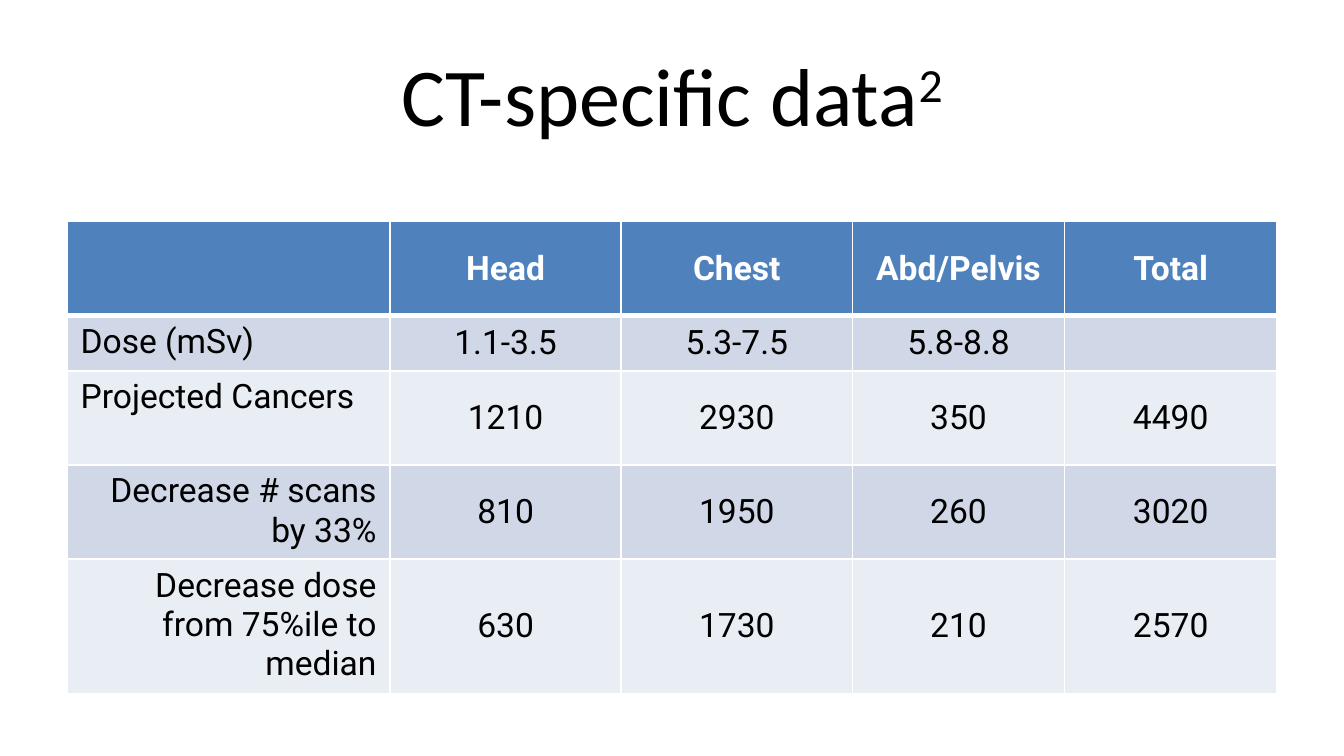
from lxml import etree
from pptx import Presentation
from pptx.dml.color import RGBColor
from pptx.enum.text import MSO_ANCHOR, PP_ALIGN
from pptx.oxml.ns import qn
from pptx.util import Cm, Pt

LEFT, CENTER, RIGHT = PP_ALIGN.LEFT, PP_ALIGN.CENTER, PP_ALIGN.RIGHT
TOP, MIDDLE = MSO_ANCHOR.TOP, MSO_ANCHOR.MIDDLE

BLACK = RGBColor(0x00, 0x00, 0x00)
WHITE = RGBColor(0xFF, 0xFF, 0xFF)
BLUE = RGBColor(0x4F, 0x81, 0xBD)
BAND_DARK = RGBColor(0xD0, 0xD8, 0xE8)
BAND_LIGHT = RGBColor(0xE9, 0xED, 0xF4)

COL_WIDTHS = [6.1, 4.37, 4.37, 4.01, 4.01]
ROW_HEIGHTS = [1.78, 1.04, 1.78, 1.78, 2.54]
ROWS = [
    ["", "Head", "Chest", "Abd/Pelvis", "Total"],
    ["Dose (mSv)", "1.1-3.5", "5.3-7.5", "5.8-8.8", ""],
    ["Projected Cancers", "1210", "2930", "350", "4490"],
    ["Decrease # scans by 33%", "810", "1950", "260", "3020"],
    ["Decrease dose from 75%ile to median", "630", "1730", "210", "2570"],
]
LABEL_ALIGNS = [LEFT, LEFT, LEFT, RIGHT, RIGHT]


def add_text(p, text, size=18, font="Roboto", color=BLACK, bold=False,
             align=CENTER, baseline=0):
    p.alignment = align
    r = p.add_run()
    r.text = text
    r.font.size = Pt(size)
    r.font.name = font
    r.font.bold = bold
    r.font.color.rgb = color
    if baseline:
        r._r.get_or_add_rPr().set("baseline", str(baseline * 1000))


def add_title(s):
    tf = s.shapes.add_textbox(Cm(1.27), Cm(0.58), Cm(22.86), Cm(2.39)).text_frame
    tf.word_wrap = True
    tf.vertical_anchor = MIDDLE
    p = tf.paragraphs[0]
    add_text(p, "CT-specific data", size=44, font="Calibri")
    add_text(p, "2", size=44, font="Calibri", baseline=30)


def set_borders(cell, top=1, bottom=1):
    tcPr = cell._tc.get_or_add_tcPr()
    for side, width in (("L", 1), ("R", 1), ("T", top), ("B", bottom)):
        ln = etree.SubElement(tcPr, qn(f"a:ln{side}"), w=str(Pt(width)))
        fill = etree.SubElement(ln, qn("a:solidFill"))
        etree.SubElement(fill, qn("a:srgbClr"), val=str(WHITE))


def fill_cell(cell, text, row, col):
    header = row == 0
    set_borders(cell, top=3 if row == 1 else 1, bottom=3 if header else 1)
    cell.fill.solid()
    cell.fill.fore_color.rgb = BLUE if header else (BAND_LIGHT, BAND_DARK)[row % 2]
    cell.vertical_anchor = MIDDLE if header or col else TOP
    if text:
        add_text(cell.text_frame.paragraphs[0], text, bold=header,
                 color=WHITE if header else BLACK,
                 align=CENTER if col else LABEL_ALIGNS[row])


def add_data_table(s):
    table = s.shapes.add_table(len(ROWS), len(COL_WIDTHS), Cm(1.27), Cm(4.19),
                               Cm(sum(COL_WIDTHS)), Cm(sum(ROW_HEIGHTS))).table
    for column, width in zip(table.columns, COL_WIDTHS):
        column.width = Cm(width)
    for row, height in zip(table.rows, ROW_HEIGHTS):
        row.height = Cm(height)
    for i, values in enumerate(ROWS):
        for j, text in enumerate(values):
            fill_cell(table.cell(i, j), text, i, j)


def main():
    prs = Presentation()
    prs.slide_width, prs.slide_height = Cm(25.4), Cm(14.29)
    s = prs.slides.add_slide(prs.slide_layouts[6])
    add_title(s)
    add_data_table(s)
    prs.save("out.pptx")


if __name__ == "__main__":
    main()
